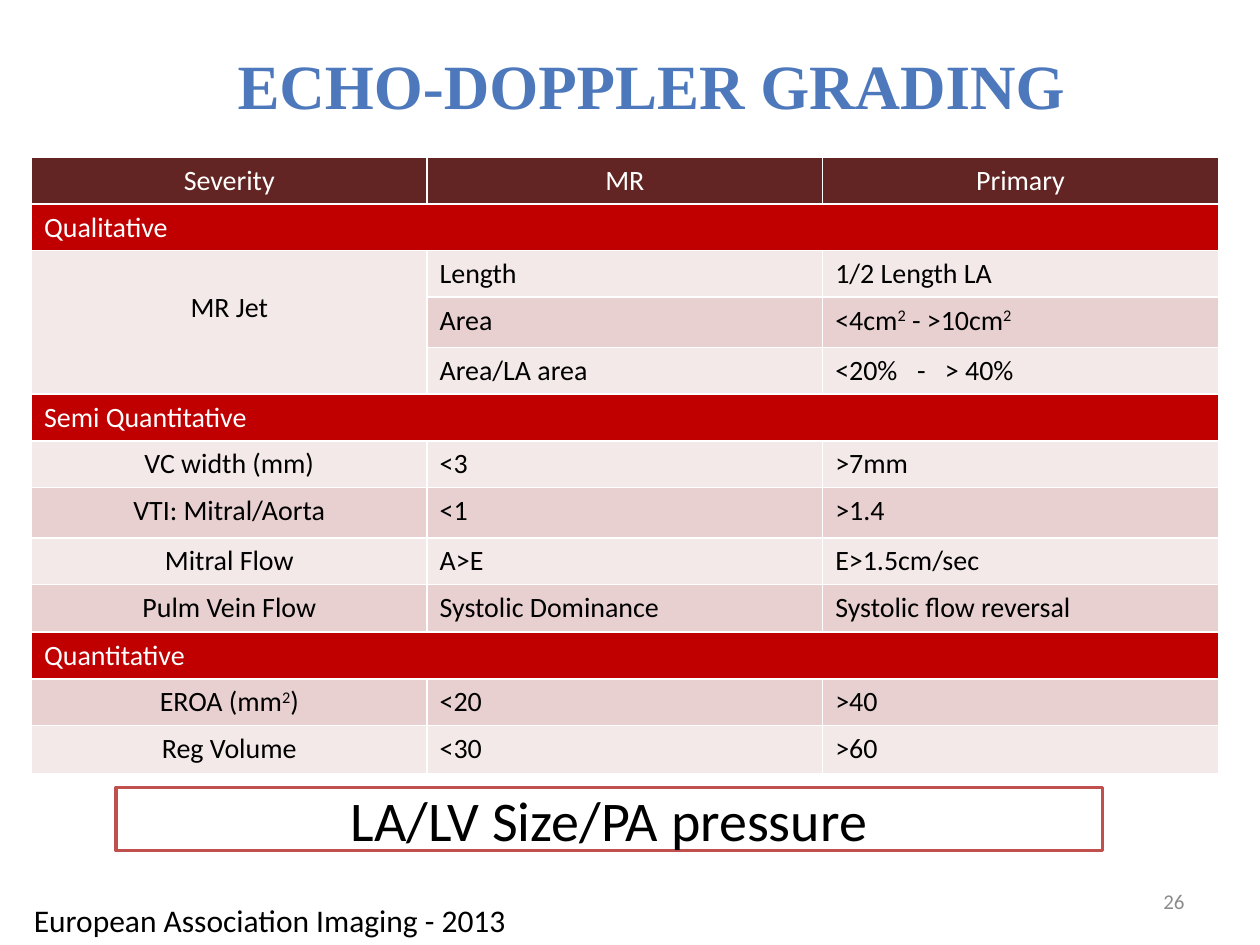
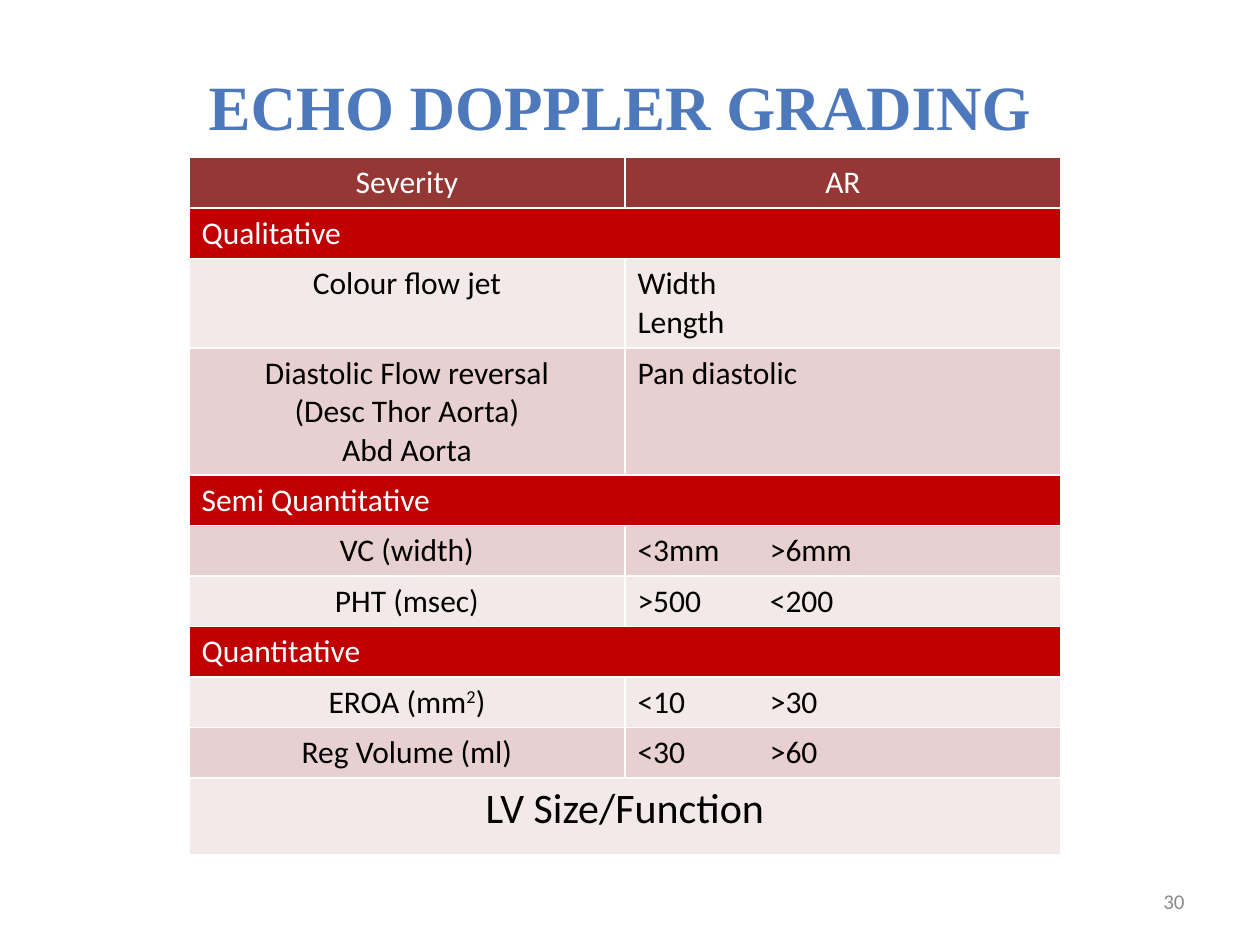
import pptx
import pptx.util
import pptx.dml.color
import pptx.enum.shapes
import pptx.enum.text
from lxml import etree

Inches, Pt = pptx.util.Inches, pptx.util.Pt
ALIGN = pptx.enum.text.PP_ALIGN
MIDDLE = pptx.enum.text.MSO_ANCHOR.MIDDLE
NS = "http://schemas.openxmlformats.org/drawingml/2006/main"

# Shared look
BODY_FONT, TITLE_FONT = "Calibri", "Times New Roman"
TITLE, WHITE, BLACK, GREY = "4D79BC", "FFFFFF", "000000", "8C8C8C"
SECTION, OUTLINE = "C00000", "C0504D"
STRIPES = ("F4E9E9", "E8D0D0")

# Rows with a single text are section bands; ^ marks superscripts
MR_ROWS = [
    ("Severity", "MR", "Primary"),
    ("Qualitative",),
    ("MR Jet", "Length", "1/2 Length LA"),
    ("", "Area", "<4cm^2^ - >10cm^2^"),
    ("", "Area/LA area", "<20%\t-\t> 40%"),
    ("Semi Quantitative",),
    ("VC width (mm)", "<3", ">7mm"),
    ("VTI: Mitral/Aorta", "<1", ">1.4"),
    ("Mitral Flow", "A>E", "E>1.5cm/sec"),
    ("Pulm Vein Flow", "Systolic Dominance", "Systolic flow reversal"),
    ("Quantitative",),
    ("EROA (mm^2^)", "<20", ">40"),
    ("Reg Volume", "<30", ">60"),
]
MR_HEIGHTS = [0.37, 0.37, 0.37, 0.4, 0.37, 0.37, 0.37, 0.4, 0.37, 0.38, 0.37, 0.37, 0.38]

AR_ROWS = [
    ("Severity", "AR"),
    ("Qualitative",),
    ("Colour flow jet", "Width\nLength"),
    ("Diastolic Flow reversal\n(Desc Thor Aorta)\nAbd Aorta", "Pan diastolic"),
    ("Semi Quantitative",),
    ("VC (width)", "<3mm\t>6mm"),
    ("PHT (msec)", ">500\t<200"),
    ("Quantitative",),
    ("EROA (mm^2^)", "<10\t>30"),
    ("Reg Volume (ml)", "<30\t>60"),
    ("LV Size/Function",),
]
AR_HEIGHTS = [0.4, 0.4, 0.71, 1.01, 0.4, 0.4, 0.4, 0.4, 0.4, 0.4, 0.61]


def rgb(value):
    return pptx.dml.color.RGBColor.from_string(value)


def set_tabs(p, stops):
    tabs = etree.SubElement(p._p.get_or_add_pPr(), f"{{{NS}}}tabLst")
    for stop in stops:
        etree.SubElement(tabs, f"{{{NS}}}tab", pos=str(Inches(stop)), algn="l")


def write(tf, text, size, color=BLACK, align=ALIGN.LEFT, font=BODY_FONT, bold=False, tabs=()):
    tf.word_wrap = True
    for i, line in enumerate(text.split("\n")):
        p = tf.add_paragraph() if i else tf.paragraphs[0]
        p.alignment = align
        if "\t" in line:
            set_tabs(p, tabs)
        p.font.size, p.font.name, p.font.bold = Pt(size), font, bold
        p.font.color.rgb = rgb(color)
        for j, part in enumerate(line.split("^")):
            if part:
                r = p.add_run()
                r.text = part
                if j % 2:
                    r._r.get_or_add_rPr().set("baseline", "30000")


def add_text(s, box, text, size, anchor=MIDDLE, **style):
    tf = s.shapes.add_textbox(*map(Inches, box)).text_frame
    tf.vertical_anchor = anchor
    write(tf, text, size, **style)


def add_title(s, box, text):
    add_text(s, box, text, 36, color=TITLE, align=ALIGN.CENTER, font=TITLE_FONT, bold=True)


def add_number(s, number):
    add_text(s, (7.17, 6.95, 2.33, 0.4), number, 12, color=GREY, align=ALIGN.RIGHT)


def fill_cell(cell, fill, text, size, **style):
    cell.fill.solid()
    cell.fill.fore_color.rgb = rgb(fill)
    write(cell.text_frame, text, size, **style)


def add_grading_table(s, left, width, rows, heights, header_fill, size, tabs, closing_size=None):
    columns = len(rows[0])
    frame = s.shapes.add_table(len(rows), columns, Inches(left), Inches(1.25),
                               Inches(width), Inches(sum(heights)))
    table = frame.table
    table.first_row = table.horz_banding = False
    for i, (row, height) in enumerate(zip(rows, heights)):
        table.rows[i].height = Inches(height)
        closing = closing_size and i == len(rows) - 1
        section = len(row) == 1 and not closing
        fill = header_fill if i == 0 else SECTION if section else STRIPES[i % 2]
        color = WHITE if i == 0 or section else BLACK
        for j in range(columns):
            centred = i == 0 or (j == 0 and not section)
            fill_cell(table.cell(i, j), fill, row[j] if j < len(row) else "",
                      closing_size if closing else size, color=color,
                      align=ALIGN.CENTER if centred else ALIGN.LEFT, tabs=tabs)
        if len(row) == 1:
            table.cell(i, 0).merge(table.cell(i, columns - 1))
    return table


def add_outlined_box(s, box, text, size):
    sp = s.shapes.add_shape(pptx.enum.shapes.MSO_SHAPE.RECTANGLE, *map(Inches, box))
    sp.shadow.inherit = False
    sp.fill.solid()
    sp.fill.fore_color.rgb = rgb(WHITE)
    sp.line.color.rgb = rgb(OUTLINE)
    sp.line.width = Pt(2)
    sp.text_frame.vertical_anchor = MIDDLE
    write(sp.text_frame, text, size, align=ALIGN.CENTER)


def main():
    prs = pptx.Presentation()
    prs.slide_width, prs.slide_height = Inches(10), Inches(7.5)
    blank = prs.slide_layouts[6]

    # Mitral regurgitation
    s = prs.slides.add_slide(blank)
    add_title(s, (1.42, 0.42, 7.5, 0.5), "ECHO-DOPPLER GRADING")
    table = add_grading_table(s, 0.25, 9.42, MR_ROWS, MR_HEIGHTS, "632523", 16, (0.65, 0.87))
    jet = table.cell(2, 0)
    jet.merge(table.cell(4, 0))
    jet.margin_top = Inches(0.32)
    add_number(s, "26")
    add_outlined_box(s, (0.92, 6.25, 7.83, 0.5), "LA/LV Size/PA pressure", 32)
    add_text(s, (0.17, 7.1, 4.42, 0.4), "European Association Imaging - 2013", 18,
             anchor=pptx.enum.text.MSO_ANCHOR.TOP)

    # Aortic regurgitation
    s = prs.slides.add_slide(blank)
    add_title(s, (0.42, 0.25, 9, 1.17), "ECHO DOPPLER GRADING")
    add_grading_table(s, 1.5, 6.92, AR_ROWS, AR_HEIGHTS, "953735", 18, (1.05,), closing_size=24)
    add_number(s, "30")

    prs.save("out.pptx")


if __name__ == "__main__":
    main()
